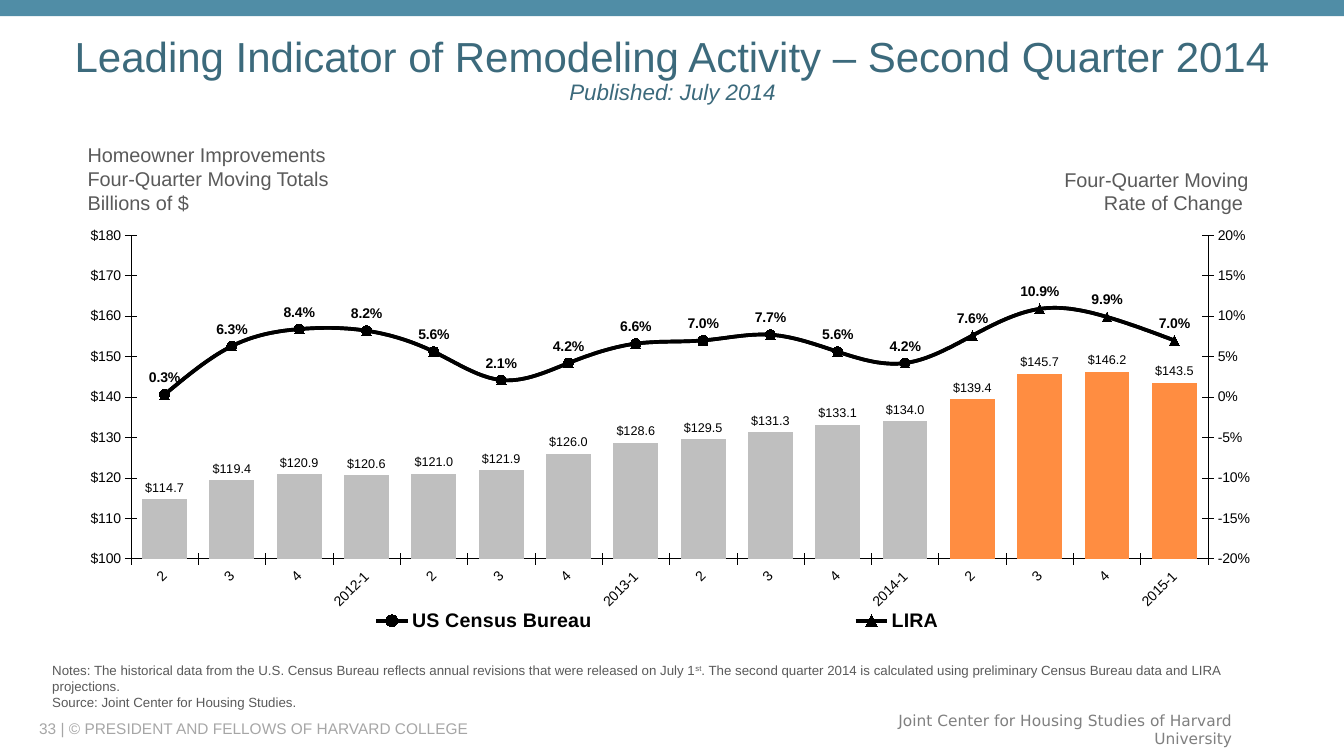
import copy

import pptx
import pptx.chart.axis
import pptx.chart.data
import pptx.dml.color
import pptx.enum.chart
import pptx.enum.shapes
import pptx.enum.text
import pptx.oxml
import pptx.oxml.ns
import pptx.util
from pptx.dml.color import RGBColor
from pptx.util import Inches

BLACK = RGBColor(0x00, 0x00, 0x00)
BAND_BLUE = RGBColor(0x50, 0x8D, 0xA6)
TITLE_BLUE = RGBColor(0x3C, 0x6A, 0x7C)
TEXT_GRAY = RGBColor(0x5A, 0x5A, 0x5A)
COPYRIGHT_GRAY = RGBColor(0xA6, 0xA6, 0xA6)
CENTER_GRAY = RGBColor(0x80, 0x80, 0x80)
BAR_GRAY = RGBColor(0xBF, 0xBF, 0xBF)
BAR_ORANGE = RGBColor(0xFF, 0x8D, 0x41)

ALIGN = pptx.enum.text.PP_ALIGN
ANCHOR = pptx.enum.text.MSO_ANCHOR
qn = pptx.oxml.ns.qn
CHART_NS = pptx.oxml.ns.nsdecls("c")


def set_font(font, size, color, name="Arial", bold=False):
    font.size = pptx.util.Pt(size)
    font.color.rgb = color
    font.name = name
    font.bold = bold


def add_text(place, paragraphs, size, color, align=ALIGN.LEFT, anchor=ANCHOR.TOP, name="Arial"):
    """Add a text box; each paragraph is a list of runs, with "st" raised."""
    box = slide.shapes.add_textbox(*map(Inches, place))
    frame = box.text_frame
    frame.word_wrap = True
    frame.vertical_anchor = anchor
    for index, runs in enumerate(paragraphs):
        para = frame.paragraphs[0] if index == 0 else frame.add_paragraph()
        para.alignment = align
        for text in runs:
            span = para.add_run()
            span.text = text
            set_font(span.font, size, color, name)
            if text == "st":
                span.font._element.set("baseline", "30000")


deck = pptx.Presentation()
deck.slide_width = Inches(13.33)
deck.slide_height = Inches(7.5)
slide = deck.slides.add_slide(deck.slide_layouts[5])

# Top band and footer
band = slide.shapes.add_shape(
    pptx.enum.shapes.MSO_SHAPE.RECTANGLE, 0, 0, deck.slide_width, Inches(0.16))
band.shadow.inherit = False
band.fill.solid()
band.fill.fore_color.rgb = BAND_BLUE
band.line.fill.background()
add_text((0.29, 7.13, 7.92, 0.2), [["33 | © PRESIDENT AND FELLOWS OF HARVARD COLLEGE"]],
         11, COPYRIGHT_GRAY, anchor=ANCHOR.MIDDLE)
add_text((8.42, 7.09, 3.9, 0.29), [["Joint Center for Housing Studies of Harvard University"]],
         11, CENTER_GRAY, ALIGN.RIGHT, ANCHOR.MIDDLE, "DejaVu Sans")

# Title
title = slide.shapes.title
title.left, title.top, title.width, title.height = map(Inches, (0.56, 0.33, 12.22, 0.75))
title.text_frame.auto_size = pptx.enum.text.MSO_AUTO_SIZE.NONE
title.text_frame.vertical_anchor = ANCHOR.MIDDLE
para = title.text_frame.paragraphs[0]
para.alignment = ALIGN.CENTER
para.line_spacing = 0.9
span = para.add_run()
span.text = "Leading Indicator of Remodeling Activity – Second Quarter 2014"
set_font(span.font, 30, TITLE_BLUE)
para.add_line_break()
span = para.add_run()
span.text = "Published: July 2014"
set_font(span.font, 16, TITLE_BLUE)
span.font.italic = True

# Axis captions
add_text((0.77, 1.37, 3.83, 0.82),
         [["Homeowner Improvements"], ["Four-Quarter Moving Totals"], ["Billions of $"]],
         14.2, TEXT_GRAY)
add_text((8.42, 1.61, 4.06, 0.58), [["Four-Quarter Moving"], ["Rate of Change "]],
         14.2, TEXT_GRAY, ALIGN.RIGHT)

# Chart data
totals = [114.7, 119.4, 120.9, 120.6, 121, 121.9, 126, 128.6,
          129.5, 131.3, 133.1, 134, 139.4, 145.7, 146.2, 143.5]
rates = [0.003, 0.063, 0.084, 0.082, 0.056, 0.021, 0.042, 0.066,
         0.07, 0.077, 0.056, 0.042, 0.076, 0.109, 0.099, 0.07]
projected = range(12, 16)
data = pptx.chart.data.CategoryChartData()
data.categories = [quarter for year in (2012, 2013, 2014, 2015)
                   for quarter in ("2", "3", "4", f"{year}-1")]
data.add_series("Series 1", totals)
data.add_series("US Census Bureau", rates)
data.add_series("LIRA", rates)
chart = slide.shapes.add_chart(
    pptx.enum.chart.XL_CHART_TYPE.COLUMN_CLUSTERED,
    *map(Inches, (0.57, 2.08, 12.14, 4.25)), data).chart
chart.has_title = False
set_font(chart.font, 13.2, BLACK)

# Left and bottom axes
for axis in (chart.category_axis, chart.value_axis):
    axis.has_major_gridlines = False
    axis.major_tick_mark = pptx.enum.chart.XL_TICK_MARK.CROSS
    axis.format.line.color.rgb = BLACK
    axis.format.line.width = pptx.util.Pt(0.33)
    set_font(axis.tick_labels.font, 10, BLACK)
chart.category_axis._element.find(qn("c:txPr")).find(qn("a:bodyPr")).set("rot", "-2700000")
dollars = chart.value_axis
dollars.minimum_scale, dollars.maximum_scale, dollars.major_unit = 100, 180, 10
dollars.tick_labels.number_format = "\\$#,##0"
dollars.tick_labels.number_format_is_linked = False

# Line plot on a second pair of axes
plot_area = chart._chartSpace.chart.plotArea
bars = plot_area.find(qn("c:barChart"))
lines = pptx.oxml.parse_xml(
    f'<c:lineChart {CHART_NS}><c:grouping val="standard"/><c:varyColors val="0"/>'
    '<c:marker val="1"/><c:axId val="5001"/><c:axId val="5002"/></c:lineChart>')
for series in bars.findall(qn("c:ser"))[1:]:
    for bar_only in series.findall(qn("c:invertIfNegative")):
        series.remove(bar_only)
    lines.find(qn("c:marker")).addprevious(series)
bars.addnext(lines)

right_axis = copy.deepcopy(dollars._element)
hidden_axis = copy.deepcopy(chart.category_axis._element)
dollars._element.addnext(right_axis)
right_axis.addnext(hidden_axis)
for element, own_id, cross_id in ((hidden_axis, "5001", "5002"), (right_axis, "5002", "5001")):
    element.find(qn("c:axId")).set("val", own_id)
    element.find(qn("c:crossAx")).set("val", cross_id)
right_axis.find(qn("c:axPos")).set("val", "r")
right_axis.find(qn("c:crosses")).set("val", "max")
pptx.chart.axis.CategoryAxis(hidden_axis).visible = False
percent = pptx.chart.axis.ValueAxis(right_axis)
percent.minimum_scale, percent.maximum_scale, percent.major_unit = -0.2, 0.2, 0.05
percent.tick_labels.number_format = "0%"

# Series
bar_plot, line_plot = chart.plots
bar_plot.gap_width = 50
bar_plot.vary_by_categories = False
total_series = bar_plot.series[0]
total_series.format.fill.solid()
total_series.format.fill.fore_color.rgb = BAR_GRAY
census, lira = line_plot.series
MARKER = pptx.enum.chart.XL_MARKER_STYLE
for series, style in ((census, MARKER.CIRCLE), (lira, MARKER.TRIANGLE)):
    series.smooth = True
    series.format.line.color.rgb = BLACK
    series.format.line.width = pptx.util.Pt(2.64)
    series.marker.style = style
    series.marker.size = 7
    series.marker.format.fill.solid()
    series.marker.format.fill.fore_color.rgb = BLACK
    series.marker.format.line.color.rgb = BLACK
for index in projected:
    fill = total_series.points[index].format.fill
    fill.solid()
    fill.fore_color.rgb = BAR_ORANGE
    point = census.points[index]
    point.marker.style = MARKER.NONE
    point.format.line.color.rgb = BLACK
    point.format.line.width = pptx.util.Pt(2.64)

POSITION = pptx.enum.chart.XL_LABEL_POSITION
for series, number_format, position, size, bold in (
        (total_series, "\\$#,##0.0", POSITION.OUTSIDE_END, 9, False),
        (lira, "0.0%", POSITION.ABOVE, 10, True)):
    labels = series.data_labels
    labels.show_value = True
    labels.number_format = number_format
    labels.number_format_is_linked = False
    labels.position = position
    set_font(labels.font, size, BLACK, bold=bold)

# Legend and fixed layout
chart.has_legend = True
legend = chart.legend
legend.position = pptx.enum.chart.XL_LEGEND_POSITION.BOTTOM
legend.include_in_layout = False
set_font(legend.font, 14, BLACK, bold=True)
for parent in (plot_area, legend._element):
    for old_layout in parent.findall(qn("c:layout")):
        parent.remove(old_layout)
legend._element.find(qn("c:legendPos")).addnext(pptx.oxml.parse_xml(
    f'<c:legendEntry {CHART_NS}><c:idx val="0"/><c:delete val="1"/></c:legendEntry>'))
for parent, position, target, frame in (
        (plot_area, 0, '<c:layoutTarget val="inner"/>', (0.06, 0.06, 0.88, 0.755)),
        (legend._element, 2, "", (0.05, 0.92, 0.88, 0.08))):
    sizes = "".join(f'<c:{key} val="{value}"/>' for key, value in zip("xywh", frame))
    parent.insert(position, pptx.oxml.parse_xml(
        f'<c:layout {CHART_NS}><c:manualLayout>{target}<c:xMode val="edge"/>'
        f'<c:yMode val="edge"/>{sizes}</c:manualLayout></c:layout>'))

# Notes under the chart
add_text((0.42, 6.52, 11.83, 0.58), [
    ["Notes: The historical data from the U.S. Census Bureau reflects annual revisions "
     "that were released on July 1", "st",
     ". The second quarter 2014 is calculated using preliminary Census Bureau data "
     "and LIRA projections."],
    ["Source: Joint Center for Housing Studies."]], 9.5, TEXT_GRAY)

deck.save("out.pptx")
